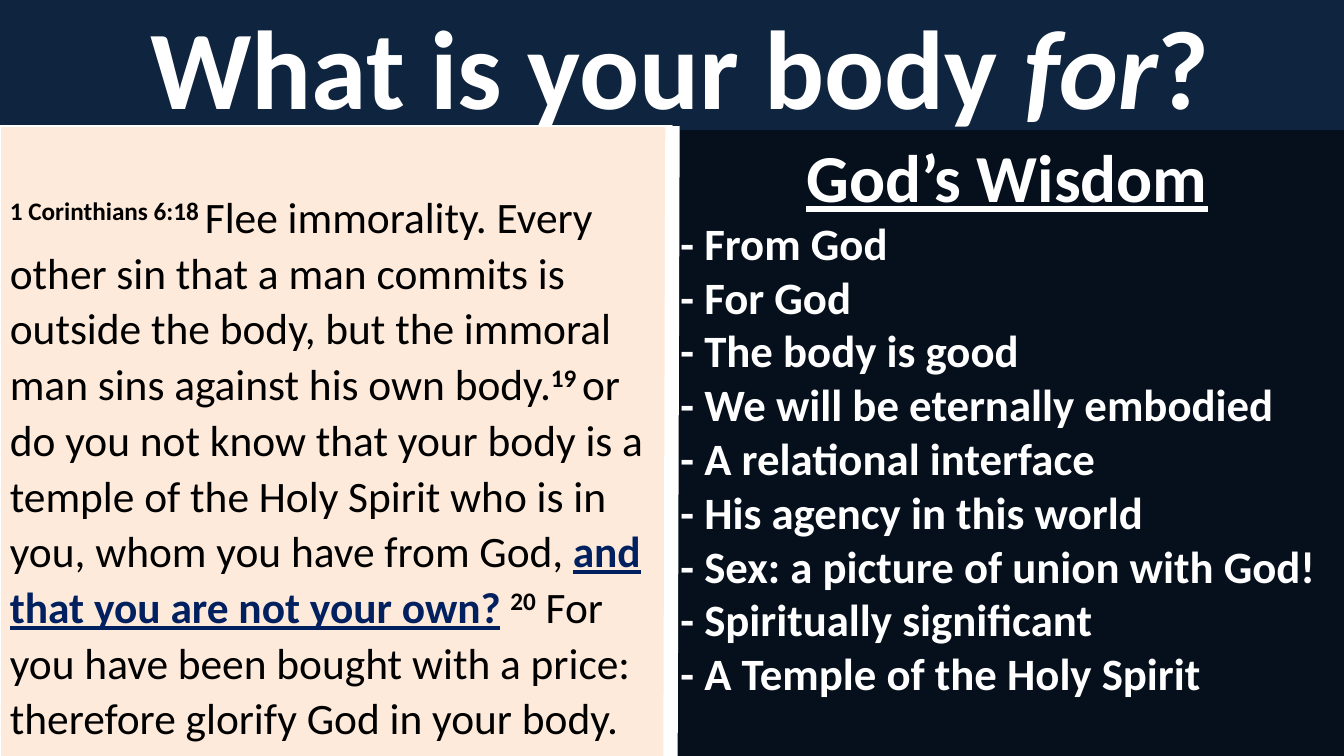
import pptx
import pptx.dml.color
import pptx.enum.shapes
import pptx.enum.text
import pptx.oxml.ns
import pptx.util
from lxml import etree

Inches = pptx.util.Inches
Shape = pptx.enum.shapes.MSO_SHAPE
Align = pptx.enum.text.PP_ALIGN
Anchor = pptx.enum.text.MSO_ANCHOR

WHITE, BLACK, NAVY, CREAM, LINK_BLUE = "FFFFFF", "000000", "0F243E", "FDEADA", "002060"
TITLE = [("What is your body ", ""), ("for", "italic"), ("?", "")]
WISDOM = [
    "From God",
    "For God",
    "The body is good",
    "We will be eternally embodied",
    "A relational interface",
    "His agency in this world",
    "Sex: a picture of union with God!",
    "Spiritually significant",
    "A Temple of the Holy Spirit",
]
VERSES = [
    ("1 Corinthians 6:18 ", "number"),
    ("Flee immorality. Every other sin that a man commits is outside the body, "
     "but the immoral man sins against his own body.", ""),
    ("19 ", "number"),
    ("or do you not know that your body is a temple of the Holy Spirit who is in you, "
     "whom you have from God, ", ""),
    ("and that you are not your own?", "key"),
    (" ", ""),
    ("20", "number"),
    (" For you have been bought with a price: therefore glorify God in your body.", ""),
]


def rgb(value):
    """Return a colour from a hex string."""
    return pptx.dml.color.RGBColor.from_string(value)


def add_box(page, kind, left, top, width, height, fill=None, opacity=None, line=None):
    """Add a preset shape without shadow, with optional fill and outline."""
    box = page.shapes.add_shape(kind, Inches(left), Inches(top), Inches(width), Inches(height))
    box.shadow.inherit = False
    if fill:
        box.fill.solid()
        box.fill.fore_color.rgb = rgb(fill)
    else:
        box.fill.background()
    if opacity:
        color = box.fill._xPr.find(".//" + pptx.oxml.ns.qn("a:srgbClr"))
        etree.SubElement(color, pptx.oxml.ns.qn("a:alpha"), val=str(opacity * 1000))
    if line:
        box.line.color.rgb = rgb(line)
        box.line.width = pptx.util.Pt(1.5)
    else:
        box.line.fill.background()
    box.text_frame.word_wrap = True
    box.text_frame.vertical_anchor = Anchor.TOP
    return box


def style_paragraph(para, size, color, bold=None, align=Align.LEFT):
    """Set the alignment and shared font of a paragraph."""
    para.alignment = align
    para.font.name = "Calibri"
    para.font.size = pptx.util.Pt(size)
    para.font.color.rgb = rgb(color)
    para.font.bold = bold


def add_spans(para, spans):
    """Add runs, each with the look that its role calls for."""
    for text, role in spans:
        span = para.add_run()
        span.text = text
        if role == "italic":
            span.font.italic = True
        if role in ("number", "key"):
            span.font.bold = True
        if role == "number":
            span.font._element.set("baseline", "30000")
        if role == "key":
            span.font.underline = True
            span.font.color.rgb = rgb(LINK_BLUE)


def add_title(page):
    """Add the headline in an unfilled callout."""
    box = add_box(page, Shape.ROUNDED_RECTANGULAR_CALLOUT, -0.17, 0, 13.83, 1.29)
    for index, value in enumerate((-0.22, 0.5, 0.17)):
        box.adjustments[index] = value
    box.text_frame.vertical_anchor = Anchor.MIDDLE
    para = box.text_frame.paragraphs[0]
    style_paragraph(para, 80, WHITE, True, Align.CENTER)
    add_spans(para, TITLE)


def add_wisdom(page):
    """Add the dark panel with its heading and dashed list."""
    frame = add_box(page, Shape.RECTANGLE, 6.65, 1.29, 6.68, 6.21, BLACK, 54).text_frame
    heading = frame.paragraphs[0]
    heading.text = "God’s Wisdom"
    style_paragraph(heading, 48, WHITE, True, Align.CENTER)
    heading.font.underline = True
    for point in WISDOM:
        para = frame.add_paragraph()
        para.text = f"- {point}"
        style_paragraph(para, 32, WHITE, True)


def add_scripture(page):
    """Add the light panel with the Bible passage."""
    box = add_box(page, Shape.RECTANGLE, 0, 1.25, 6.67, 6.28, CREAM, line=WHITE)
    box.text_frame.margin_top = Inches(0.6)
    para = box.text_frame.paragraphs[0]
    style_paragraph(para, 31, BLACK)
    para.line_spacing = 1.07
    add_spans(para, VERSES)


def add_divider(page):
    """Add the thick line between the two panels."""
    line = page.shapes.add_connector(
        pptx.enum.shapes.MSO_CONNECTOR.STRAIGHT,
        Inches(6.67), Inches(1.25), Inches(6.65), Inches(7.5))
    line.line.color.rgb = rgb(WHITE)
    line.line.width = pptx.util.Pt(10.25)
    etree.SubElement(line._element.spPr, pptx.oxml.ns.qn("a:effectLst"))


def main():
    """Build and save the slide."""
    deck = pptx.Presentation()
    deck.slide_width, deck.slide_height = Inches(13.33), Inches(7.5)
    page = deck.slides.add_slide(deck.slide_layouts[6])
    page.background.fill.solid()
    page.background.fill.fore_color.rgb = rgb(NAVY)
    add_title(page)
    add_wisdom(page)
    add_scripture(page)
    add_divider(page)
    deck.save("out.pptx")


if __name__ == "__main__":
    main()
